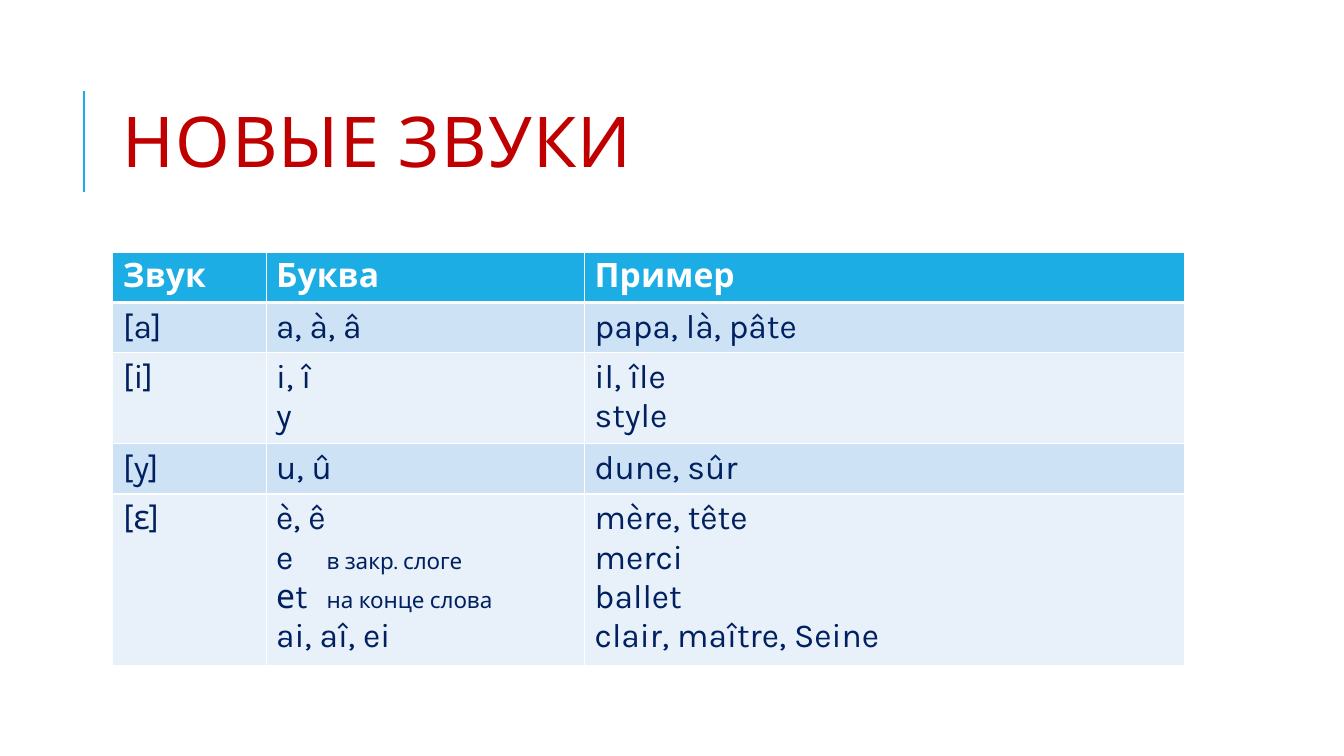
import pptx
import pptx.dml.color
import pptx.enum.shapes
import pptx.enum.text
import pptx.oxml
import pptx.oxml.ns
import pptx.util
from lxml import etree

Pt = pptx.util.Pt
HEADINGS = ["Звук", "Буква", "Пример"]
SOUNDS = [
    ("[a]", ["a, à, â"], ["papa, là, pâte"]),
    ("[i]", ["i, î", "y"], ["il, île", "style"]),
    ("[y]", ["u, û"], ["dune, sûr"]),
    (
        "[ɛ]",
        ["è, ê", ("e", "в закр. слоге"), ("еt", "на конце слова"), "ai, aî, ei"],
        ["mère, tête", "merci", "ballet", "clair, maître, Seine"],
    ),
]


def color(value):
    return pptx.dml.color.RGBColor.from_string(value)


def add_xml(parent, tag, **attributes):
    return etree.SubElement(parent, pptx.oxml.ns.qn(tag), attributes)


class Lesson:
    font = "Karla"
    accent = "1CADE4"
    title_ink = "C00000"
    ink = "002060"
    white = "FFFFFF"
    bands = ("CDE3F5", "E8F1FA")
    size = 24
    note_size = 16
    note_indent = 36

    def __init__(self, slide):
        self.slide = slide

    def add_text(self, paragraph, text, size, ink, bold=False):
        run = paragraph.add_run()
        run.text = text
        style = {"name": self.font, "size": Pt(size), "bold": bold}
        for key, value in style.items():
            setattr(run.font, key, value)
        run.font.color.rgb = color(ink)
        return run

    def rule(self, x, top, bottom):
        rule = self.slide.shapes.add_connector(
            pptx.enum.shapes.MSO_CONNECTOR.STRAIGHT, Pt(x), Pt(bottom), Pt(x), Pt(top)
        )
        rule.line.color.rgb = color(self.accent)
        rule.line.width = Pt(1.5)
        add_xml(rule._element.spPr, "a:effectLst")

    def title(self, text, left, top, width, height):
        frame = self.slide.shapes.add_textbox(
            Pt(left), Pt(top), Pt(width), Pt(height)
        ).text_frame
        layout = {
            "word_wrap": True,
            "vertical_anchor": pptx.enum.text.MSO_ANCHOR.MIDDLE,
        }
        for key, value in layout.items():
            setattr(frame, key, value)
        heading = frame.paragraphs[0]
        heading.line_spacing = 0.8
        run = self.add_text(heading, text, 50, self.title_ink)
        run._r.get_or_add_rPr().set("spc", "100")

    def cell(self, cell, lines, fill, ink, bold, top, bottom):
        properties = cell._tc.get_or_add_tcPr()
        for side, width in {"L": 1, "R": 1, "T": top, "B": bottom}.items():
            border = add_xml(properties, f"a:ln{side}", w=str(int(Pt(width))))
            add_xml(add_xml(border, "a:solidFill"), "a:srgbClr", val=self.white)
        cell.fill.solid()
        cell.fill.fore_color.rgb = color(fill)
        frame = cell.text_frame
        for index, line in enumerate(lines):
            paragraph = frame.add_paragraph() if index else frame.paragraphs[0]
            letters, note = line if isinstance(line, tuple) else (line, "")
            self.add_text(paragraph, letters, self.size, ink, bold)
            if note:
                tabs = add_xml(paragraph._p.get_or_add_pPr(), "a:tabLst")
                add_xml(tabs, "a:tab", pos=str(int(Pt(self.note_indent))), algn="l")
                self.add_text(paragraph, "\t" + note, self.note_size, ink)

    def table(self, headings, sounds, left, top, widths, row_height):
        rows = [[[heading] for heading in headings]]
        rows += [[[sound], letters, examples] for sound, letters, examples in sounds]
        table = self.slide.shapes.add_table(
            len(rows), len(widths), Pt(left), Pt(top),
            Pt(sum(widths)), Pt(row_height * len(rows)),
        ).table
        table.horz_banding = False
        for column, width in zip(table.columns, widths):
            column.width = Pt(width)
        for r, row in enumerate(rows):
            table.rows[r].height = Pt(row_height)
            header = r == 0
            fill = self.accent if header else self.bands[(r - 1) % 2]
            ink = self.white if header else self.ink
            for c, lines in enumerate(row):
                self.cell(
                    table.cell(r, c), lines, fill, ink, header,
                    top=3 if r == 1 else 1, bottom=3 if header else 1,
                )


def main():
    deck = pptx.Presentation()
    deck.slide_width, deck.slide_height = Pt(960), Pt(540)
    lesson = Lesson(deck.slides.add_slide(deck.slide_layouts[6]))
    lesson.rule(60, 65, 137)
    lesson.title("НОВЫЕ ЗВУКИ", 80.64, 46, 765, 118)
    lesson.table(HEADINGS, SOUNDS, 80.64, 180, [109.5, 227.5, 428.4], 29.5)
    deck.save("out.pptx")


if __name__ == "__main__":
    main()
